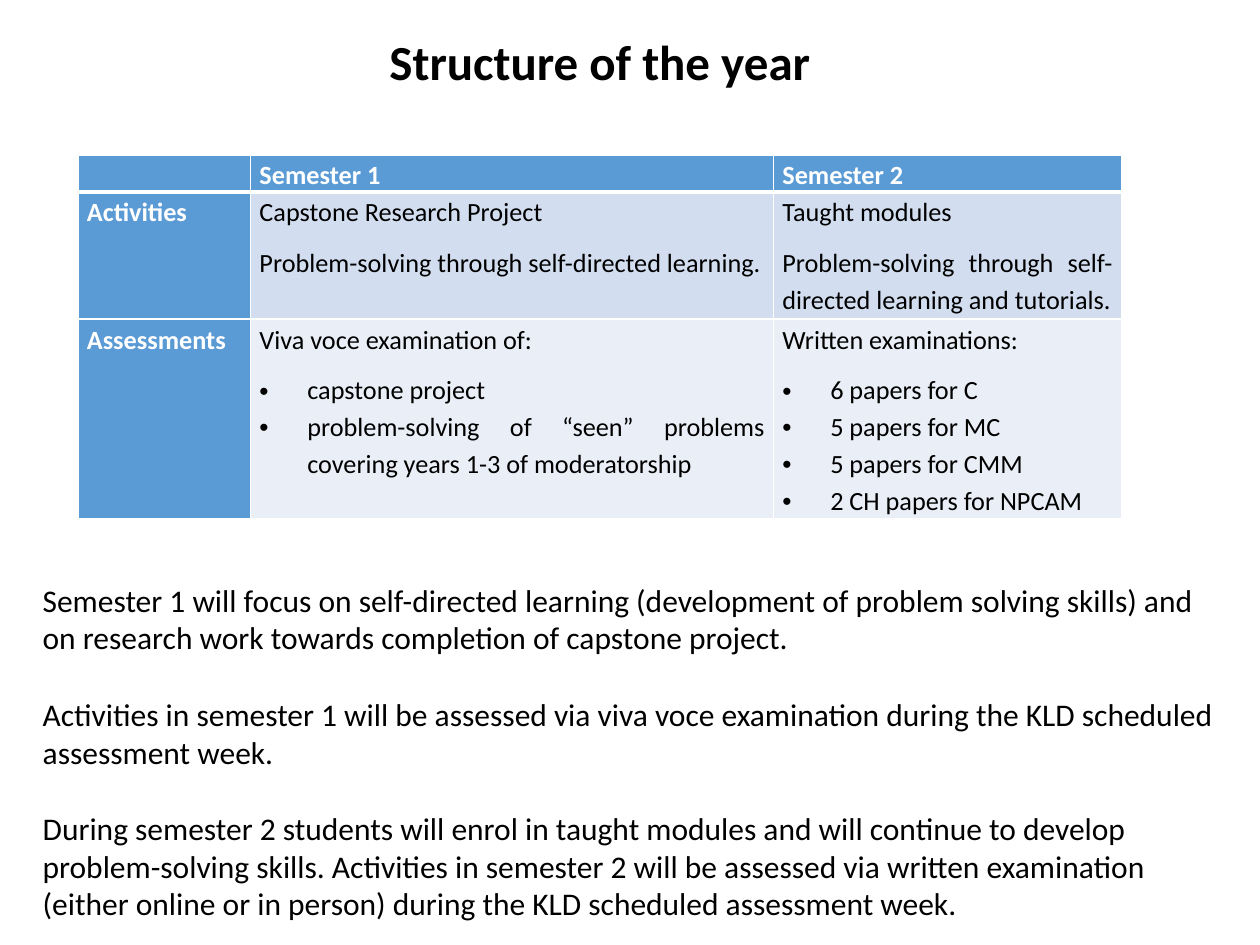
from lxml import etree
from pptx import Presentation
from pptx import util as u
from pptx.dml.color import RGBColor
from pptx.enum import text
from pptx.oxml import ns

FONT = "Calibri"
BLACK, WHITE, BLUE = "000000", "FFFFFF", "5B9BD5"
ROW_FILLS = [BLUE, "D2DEEF", "EAEFF7"]
COLUMN_WIDTHS = [1.37, 4.15, 2.76]
ROW_HEIGHTS = [0.27, 1.01, 1.58]
BULLET = "• "

TABLE_ROWS = [
    [[""], ["Semester 1"], ["Semester 2"]],
    [["Activities"],
     ["Capstone Research Project", "Problem-solving through self-directed learning."],
     ["Taught modules", "Problem-solving through self-directed learning and tutorials."]],
    [["Assessments"],
     ["Viva voce examination of:", "• capstone project",
      "• problem-solving of “seen” problems covering years 1-3 of moderatorship"],
     ["Written examinations:", "• 6 papers for C", "• 5 papers for MC",
      "• 5 papers for CMM", "• 2 CH papers for NPCAM"]],
]
NOTES = [
    "Semester 1 will focus on self-directed learning (development of problem solving "
    "skills) and on research work towards completion of capstone project.",
    "Activities in semester 1 will be assessed via viva voce examination during the "
    "KLD scheduled assessment week.",
    "During semester 2 students will enrol in taught modules and will continue to develop "
    "problem-solving skills. Activities in semester 2 will be assessed via written "
    "examination (either online or in person) during the KLD scheduled assessment week.",
]


def rgb(value):
    return RGBColor.from_string(value)


def inches(box):
    return [u.Inches(length) for length in box]


def set_font(paragraph, size, color=BLACK, bold=False):
    font = paragraph.font
    font.name, font.size, font.bold = FONT, u.Pt(size), bold
    font.color.rgb = rgb(color)


def add_element(parent, tag, **attributes):
    return etree.SubElement(parent, ns.qn(tag), attributes)


def add_bullet(paragraph):
    properties = paragraph._p.get_or_add_pPr()
    properties.set("marL", str(u.Inches(0.38)))
    properties.set("indent", str(-u.Inches(0.38)))
    add_element(properties, "a:buFont", typeface="Arial")
    add_element(properties, "a:buChar", char=BULLET.strip())


def set_borders(cell, row):
    widths = {"L": 1, "R": 1, "T": 3 if row == 1 else 1, "B": 3 if row == 0 else 1}
    for side, width in widths.items():
        line = add_element(cell._tc.get_or_add_tcPr(), f"a:ln{side}", w=str(u.Pt(width)))
        add_element(add_element(line, "a:solidFill"), "a:srgbClr", val=WHITE)


def fill_cell(cell, lines, row, column):
    heading = row == 0 or column == 0
    set_borders(cell, row)
    cell.fill.solid()
    cell.fill.fore_color.rgb = rgb(BLUE if heading else ROW_FILLS[row])
    cell.margin_left = cell.margin_right = u.Inches(0.07)
    cell.margin_top = cell.margin_bottom = 0
    cell.text = "\n".join(line.removeprefix(BULLET) for line in lines)
    for index, (paragraph, line) in enumerate(zip(cell.text_frame.paragraphs, lines)):
        bulleted = line.startswith(BULLET)
        last = index == len(lines) - 1
        paragraph.alignment = text.PP_ALIGN.JUSTIFY
        paragraph.line_spacing = 1.15
        paragraph.space_after = u.Pt(0 if bulleted and not last else 8)
        if bulleted:
            add_bullet(paragraph)
        set_font(paragraph, 15, WHITE if heading else BLACK, heading)


def add_title(slide, box):
    title = slide.shapes.title
    title.left, title.top, title.width, title.height = inches(box)
    title.text_frame.text = "Structure of the year"
    title.text_frame.word_wrap = False
    set_font(title.text_frame.paragraphs[0], 28, bold=True)


def add_semester_table(slide, box):
    table = slide.shapes.add_table(
        len(ROW_HEIGHTS), len(COLUMN_WIDTHS), *inches(box)).table
    for column, width in zip(table.columns, COLUMN_WIDTHS):
        column.width = u.Inches(width)
    for row, height in zip(table.rows, ROW_HEIGHTS):
        row.height = u.Inches(height)
    for row, cells in enumerate(TABLE_ROWS):
        for column, lines in enumerate(cells):
            fill_cell(table.cell(row, column), lines, row, column)


def add_notes(slide, box):
    frame = slide.shapes.add_textbox(*inches(box)).text_frame
    frame.word_wrap = True
    frame.text = "\n".join(NOTES)
    for paragraph in frame.paragraphs:
        set_font(paragraph, 18)
    for paragraph in frame.paragraphs[:-1]:
        paragraph.space_after = u.Pt(22)


def main():
    presentation = Presentation()
    presentation.slide_width, presentation.slide_height = inches((10, 7.5))
    slide = presentation.slides.add_slide(
        presentation.slide_layouts.get_by_name("Title Only"))
    add_title(slide, (2.97, 0.2, 3.58, 0.57))
    add_semester_table(slide, (0.62, 1.23, sum(COLUMN_WIDTHS), sum(ROW_HEIGHTS)))
    add_notes(slide, (0.24, 4.56, 9.61, 2.83))
    presentation.save("out.pptx")


if __name__ == "__main__":
    main()
